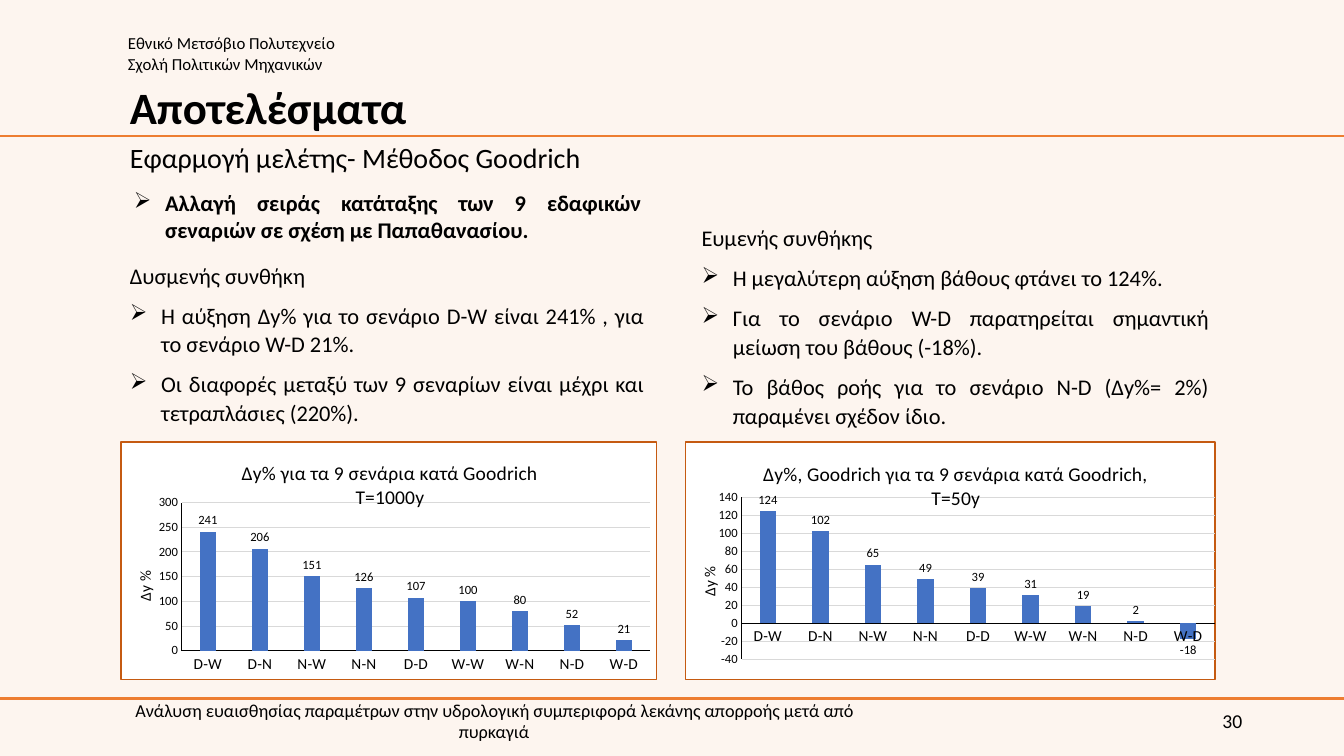
import lxml.etree
import pptx
import pptx.chart.data
import pptx.dml.color
import pptx.enum.chart
import pptx.enum.shapes
import pptx.enum.text
import pptx.oxml
import pptx.oxml.ns
import pptx.util

Inches = pptx.util.Inches
Pt = pptx.util.Pt
RGBColor = pptx.dml.color.RGBColor
ALIGN = pptx.enum.text.PP_ALIGN
ANCHOR = pptx.enum.text.MSO_ANCHOR
qn = pptx.oxml.ns.qn

BACKGROUND = RGBColor(0xFD, 0xF5, 0xEF)
BLACK = RGBColor(0, 0, 0)
RULE = RGBColor(0xED, 0x7D, 0x31)
BORDER = RGBColor(0xC5, 0x5A, 0x11)
BAR = RGBColor(0x44, 0x72, 0xC4)
GRID = RGBColor(0xD9, 0xD9, 0xD9)
FONT = "Calibri"
SLIDE_WIDTH, SLIDE_HEIGHT = 13.33, 7.5
SCENARIOS = ["D-W", "D-N", "N-W", "N-N", "D-D", "W-W", "W-N", "N-D", "W-D"]
BODY = {"alignment": ALIGN.JUSTIFY, "line_spacing": 1.07, "space_after": Pt(8)}


def set_font(font, size, bold=False):
    """Apply the common typeface and colour at the given size."""
    for name, value in {"name": FONT, "size": Pt(size), "bold": bold}.items():
        setattr(font, name, value)
    font.color.rgb = BLACK


def add_bullet(paragraph):
    """Give the paragraph an arrow bullet with a hanging indent."""
    properties = paragraph._p.get_or_add_pPr()
    properties.set("marL", str(Inches(0.31)))
    properties.set("indent", str(Inches(-0.31)))
    bullet = lxml.etree.SubElement(properties, qn("a:buChar"))
    bullet.set("char", "➢")


def add_text(slide, box, lines, size, bold=False, anchor=ANCHOR.TOP, bullets_from=None, **formats):
    """Place lines of text in a box, with bullets from a given line onwards."""
    frame = slide.shapes.add_textbox(*map(Inches, box)).text_frame
    frame.word_wrap = True
    frame.vertical_anchor = anchor
    for index, line in enumerate(lines):
        paragraph = frame.add_paragraph() if index else frame.paragraphs[0]
        paragraph.text = line
        if bullets_from is not None and index >= bullets_from:
            add_bullet(paragraph)
        for name, value in formats.items():
            setattr(paragraph, name, value)
        set_font(paragraph.runs[0].font, size, bold)


def add_rule(slide, top):
    """Draw a line across the whole slide."""
    rule = slide.shapes.add_connector(
        pptx.enum.shapes.MSO_CONNECTOR.STRAIGHT,
        0, Inches(top), Inches(SLIDE_WIDTH), Inches(top))
    rule.line.color.rgb = RULE
    rule.line.width = Pt(1.5)
    lxml.etree.SubElement(rule._element.spPr, qn("a:effectLst"))


def make_layout(**places):
    """Return a manual chart layout holding the given fractions."""
    layout = lxml.etree.Element(qn("c:layout"))
    manual = lxml.etree.SubElement(layout, qn("c:manualLayout"))
    if "w" in places:
        lxml.etree.SubElement(manual, qn("c:layoutTarget")).set("val", "inner")
    for name in ("x", "y"):
        lxml.etree.SubElement(manual, qn(f"c:{name}Mode")).set("val", "edge")
    for name, value in places.items():
        lxml.etree.SubElement(manual, qn(f"c:{name}")).set("val", str(value))
    return layout


def replace_layout(parent, layout, position):
    """Put the layout at its position among the children of a chart part."""
    for old in parent.findall(qn("c:layout")):
        parent.remove(old)
    parent.insert(position, layout)


def set_title(title, lines, size, x, y):
    """Fill a chart or axis title and place its corner."""
    frame = title.text_frame
    for index, line in enumerate(lines):
        paragraph = frame.add_paragraph() if index else frame.paragraphs[0]
        paragraph.text = line
        set_font(paragraph.font, size)
        set_font(paragraph.runs[0].font, size)
    replace_layout(title._element, make_layout(x=x, y=y), 1)


def frame_chart(chart):
    """Give the chart a white ground and a coloured border."""
    properties = pptx.oxml.parse_xml(
        f'<c:spPr {pptx.oxml.ns.nsdecls("c", "a")}>'
        '<a:solidFill><a:srgbClr val="FFFFFF"/></a:solidFill>'
        f'<a:ln w="{Pt(1.25)}"><a:solidFill><a:srgbClr val="{BORDER}"/></a:solidFill></a:ln>'
        '</c:spPr>')
    chart._chartSpace.find(qn("c:chart")).addnext(properties)


def add_depth_chart(slide, box, values, title, title_at, axis_title_at, plot, scale):
    """Draw a column chart of the depth change for each scenario."""
    data = pptx.chart.data.CategoryChartData(number_format="0")
    data.categories = SCENARIOS
    data.add_series("Δy %", values)
    chart = slide.shapes.add_chart(
        pptx.enum.chart.XL_CHART_TYPE.COLUMN_CLUSTERED, *map(Inches, box), data).chart
    set_font(chart.font, 10)
    frame_chart(chart)
    chart.has_legend = False
    chart.has_title = True
    set_title(chart.chart_title, title, 14, *title_at)
    chart.chart_title.include_in_layout = False

    value_axis = chart.value_axis
    for axis, size in ((chart.category_axis, 11), (value_axis, 9)):
        axis.major_tick_mark = axis.minor_tick_mark = pptx.enum.chart.XL_TICK_MARK.NONE
        set_font(axis.tick_labels.font, size)
        axis.format.line.color.rgb = BLACK
        axis.format.line.width = Pt(0.75)
    for name, value in zip(("minimum_scale", "maximum_scale", "major_unit"), scale):
        setattr(value_axis, name, value)
    value_axis.major_gridlines.format.line.color.rgb = GRID
    value_axis.major_gridlines.format.line.width = Pt(0.75)
    set_title(value_axis.axis_title, ["Δy %"], 11, *axis_title_at)
    value_axis.axis_title.text_frame._txBody.bodyPr.set("rot", "-5400000")

    columns = chart.plots[0]
    formats = {"gap_width": 219, "overlap": -27, "vary_by_categories": False,
               "has_data_labels": True}
    for name, value in formats.items():
        setattr(columns, name, value)
    labels = columns.data_labels
    labels.show_value = True
    labels.position = pptx.enum.chart.XL_LABEL_POSITION.OUTSIDE_END
    set_font(labels.font, 9)
    series = columns.series[0]
    series.invert_if_negative = False
    series.format.fill.solid()
    series.format.fill.fore_color.rgb = BAR
    plot_area = chart._chartSpace.find(".//" + qn("c:plotArea"))
    replace_layout(plot_area, make_layout(**dict(zip("xywh", plot))), 0)


def add_header(slide):
    """Place the institution, the title and the subtitle."""
    add_text(slide, (1.17, 0.28, 4.32, 0.5),
             ["Εθνικό Μετσόβιο Πολυτεχνείο", "Σχολή Πολιτικών Μηχανικών"], 12)
    add_rule(slide, 1.35)
    add_text(slide, (1.19, 0.61, 5.8, 0.96), ["Αποτελέσματα"], 32, True,
             ANCHOR.MIDDLE, line_spacing=0.9)
    add_text(slide, (1.19, 1.34, 5.61, 0.44), ["Εφαρμογή μελέτης- Μέθοδος Goodrich"], 20)


def add_adverse_column(slide, left):
    """Place the findings and the chart for adverse conditions."""
    add_text(slide, (left + 0.04, 1.83, 5.23, 0.64),
             ["Αλλαγή σειράς κατάταξης των 9 εδαφικών σεναριών σε σχέση με Παπαθανασίου."],
             16, True, bullets_from=0, alignment=ALIGN.JUSTIFY)
    add_text(slide, (left, 2.53, 5.3, 1.75), [
        "Δυσμενής συνθήκη",
        "Η αύξηση Δy% για το σενάριο D-W είναι 241% , για το σενάριο W-D 21%.",
        "Οι διαφορές μεταξύ των 9 σεναρίων είναι μέχρι και τετραπλάσιες (220%).",
    ], 16, bullets_from=1, **BODY)
    add_depth_chart(slide, (left, 4.38, 5.33, 2.37), [241, 206, 151, 126, 107, 100, 80, 52, 21],
                    ["Δy% για τα 9 σενάρια κατά Goodrich", "Τ=1000y"], (0.22, 0.06),
                    (0.02, 0.53), (0.114, 0.254, 0.874, 0.625), (0, 300, 50))


def add_favourable_column(slide, left):
    """Place the findings and the chart for favourable conditions."""
    add_text(slide, (left + 0.07, 2.16, 5.23, 2.15), [
        "Ευμενής συνθήκης",
        "Η μεγαλύτερη αύξηση βάθους φτάνει το 124%.",
        "Για το σενάριο W-D παρατηρείται σημαντική μείωση του βάθους (-18%).",
        "Το βάθος ροής για το σενάριο N-D (Δy%= 2%) παραμένει σχέδον ίδιο.",
    ], 16, bullets_from=1, **BODY)
    add_depth_chart(slide, (left, 4.38, 5.27, 2.37), [124, 102, 65, 49, 39, 31, 19, 2, -18],
                    ["Δy%, Goodrich για τα 9 σενάρια κατά Goodrich, Τ=50y"], (0.14, 0.06),
                    (0.02, 0.51), (0.106, 0.231, 0.893, 0.684), (-40, 140, 20))


def add_footer(slide, top):
    """Place the lower rule, the study title and the page number."""
    add_rule(slide, top - 0.02)
    add_text(slide, (0.89, top, 8.02, 0.4),
             ["Ανάλυση ευαισθησίας παραμέτρων στην υδρολογική συμπεριφορά "
              "λεκάνης απορροής μετά από πυρκαγιά"],
             13, anchor=ANCHOR.MIDDLE, alignment=ALIGN.CENTER)
    add_text(slide, (9.42, top, 3, 0.4), ["30"], 14, anchor=ANCHOR.MIDDLE,
             alignment=ALIGN.RIGHT)


def main():
    """Build the results slide and save it."""
    presentation = pptx.Presentation()
    presentation.slide_width = Inches(SLIDE_WIDTH)
    presentation.slide_height = Inches(SLIDE_HEIGHT)
    slide = presentation.slides.add_slide(presentation.slide_layouts[6])
    slide.background.fill.solid()
    slide.background.fill.fore_color.rgb = BACKGROUND
    add_header(slide)
    add_adverse_column(slide, 1.19)
    add_favourable_column(slide, 6.79)
    add_footer(slide, 6.95)
    presentation.save("out.pptx")


if __name__ == "__main__":
    main()
